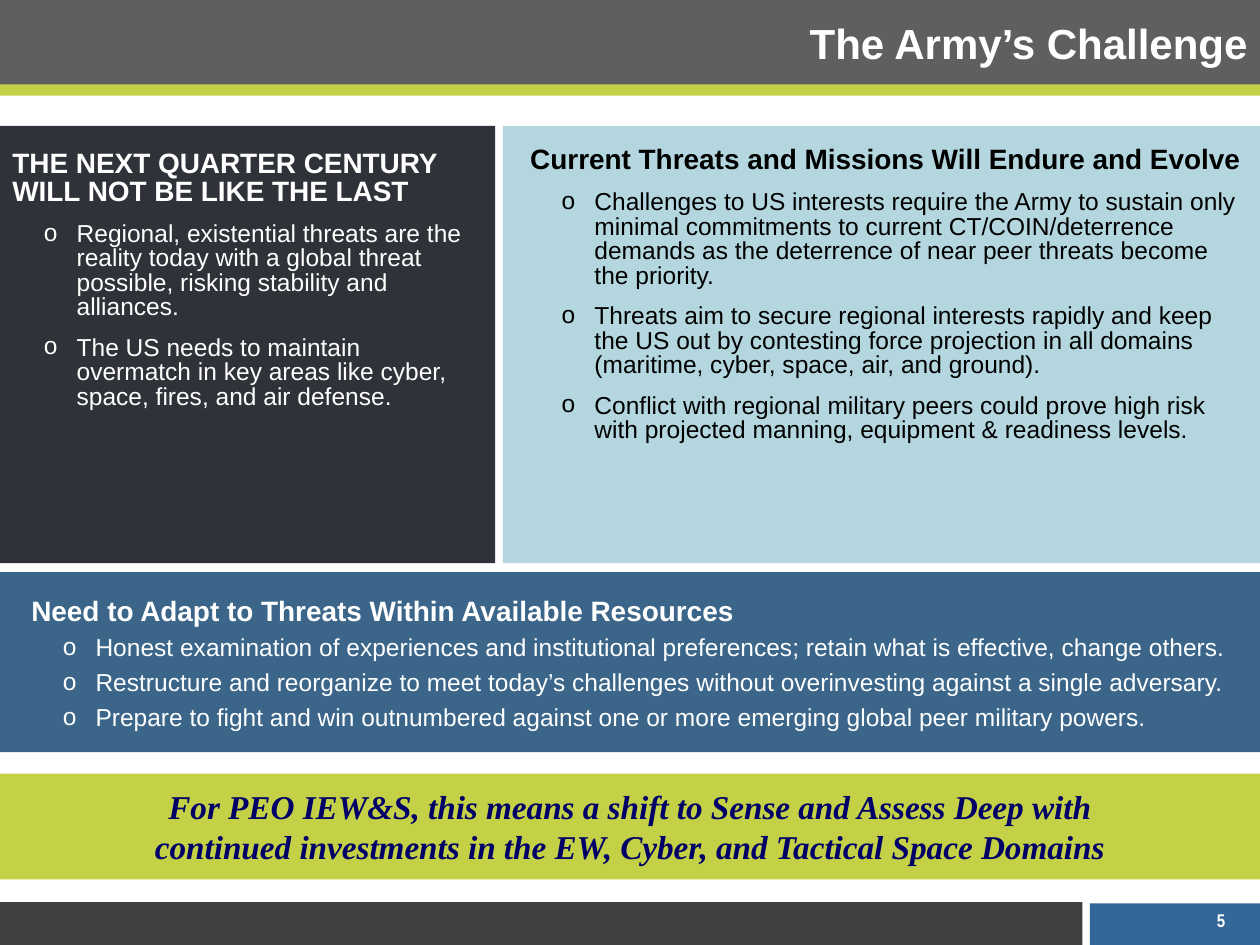
from lxml import etree
from pptx import Presentation
from pptx.dml.color import RGBColor
from pptx.enum import shapes, text
from pptx.oxml import ns
from pptx.util import Inches, Pt

WHITE = RGBColor(0xFF, 0xFF, 0xFF)
BLACK = RGBColor(0, 0, 0)
NAVY = RGBColor(0x00, 0x00, 0x66)
LIME = RGBColor(0xC4, 0xD1, 0x46)
DARK_GREY = RGBColor(0x40, 0x40, 0x40)
GREY = RGBColor(0x5F, 0x5F, 0x5F)
PAGE_BLUE = RGBColor(0x33, 0x66, 0x99)
STEEL = RGBColor(0x3B, 0x66, 0x89)
PALE_BLUE = RGBColor(0xB3, 0xD6, 0xDF)
CHARCOAL = RGBColor(0x2F, 0x32, 0x39)

# left, top, width, height in inches, then fill
BANDS = [
    ((0, 7.16, 8.59, 0.34), DARK_GREY),
    ((8.65, 7.17, 1.35, 0.34), PAGE_BLUE),
    ((0, 0, 10, 0.68), GREY),
    ((-0.01, 0.67, 10.01, 0.09), LIME),
    ((0, 4.54, 10, 1.43), STEEL),
    ((3.99, 1, 6.01, 3.47), PALE_BLUE),
    ((0, 1, 3.93, 3.47), CHARCOAL),
]

SECTIONS = [
    dict(
        place=(0, 1.15, 3.82, 2.18), color=WHITE, heading_line=16, gap=9,
        heading="THE NEXT QUARTER CENTURY WILL NOT BE LIKE THE LAST",
        points=[
            "Regional, existential threats are the reality today with a global "
            "threat possible, risking stability and alliances.",
            "The US needs to maintain overmatch in key areas like cyber, space, "
            "fires, and air defense.",
        ],
    ),
    dict(
        place=(4.11, 1.15, 5.89, 2.44), color=BLACK, heading_line=14, gap=9,
        heading="Current Threats and Missions Will Endure and Evolve",
        points=[
            "Challenges to US interests require the Army to sustain only minimal "
            "commitments to current CT/COIN/deterrence demands as the deterrence "
            "of near peer threats become the priority.",
            "Threats aim to secure regional interests rapidly and keep the US out "
            "by contesting force projection in all domains (maritime, cyber, "
            "space, air, and ground).",
            "Conflict with regional military peers could prove high risk with "
            "projected manning, equipment & readiness levels.",
        ],
    ),
    dict(
        place=(0.15, 4.73, 9.95, 1.14), color=WHITE, heading_line=14, gap=6,
        heading="Need to Adapt to Threats Within Available Resources",
        points=[
            "Honest examination of experiences and institutional preferences; "
            "retain what is effective, change others.",
            "Restructure and reorganize to meet today’s challenges without "
            "overinvesting against a single adversary.",
            "Prepare to fight and win outnumbered against one or more emerging "
            "global peer military powers.",
        ],
    ),
]

MESSAGE = [
    "For PEO IEW&S, this means a shift to Sense and Assess Deep with",
    "continued investments in the EW, Cyber, and Tactical Space Domains",
]


def add_band(page, place, fill):
    band = page.shapes.add_shape(
        shapes.MSO_SHAPE.RECTANGLE, *map(Inches, place))
    band.shadow.inherit = False
    band.fill.solid()
    band.fill.fore_color.rgb = fill
    band.line.fill.background()
    return band


def add_box(page, place, wrap=True):
    frame = page.shapes.add_textbox(*map(Inches, place)).text_frame
    frame.word_wrap = wrap
    return frame


def write(frame, words, size, color, font="Arial", bold=False, italic=False,
          align=text.PP_ALIGN.LEFT, line=None, after=None, bullet=False):
    """Fill the frame's empty first paragraph, or add one below the others."""
    para = frame.paragraphs[0]
    if para.runs:
        para = frame.add_paragraph()
    para.alignment = align
    if line is not None:
        para.line_spacing = line
    if after is not None:
        para.space_after = Pt(after)
    if bullet:
        para.level = 1
        settings = para._p.get_or_add_pPr()
        settings.set("marL", str(Inches(0.51)))
        settings.set("indent", str(Inches(-0.26)))
        etree.SubElement(settings, ns.qn("a:buFont"), typeface="Arial")
        etree.SubElement(settings, ns.qn("a:buChar"), char="o")
    span = para.add_run()
    span.text = words
    span.font.name = font
    span.font.size = Pt(size)
    span.font.bold = bold
    span.font.italic = italic
    span.font.color.rgb = color


def main():
    deck = Presentation()
    deck.slide_width, deck.slide_height = Inches(10), Inches(7.5)
    page = deck.slides.add_slide(deck.slide_layouts[6])

    for place, fill in BANDS:
        add_band(page, place, fill)

    title = add_box(page, (4.92, 0, 5.08, 0.74))
    title.vertical_anchor = text.MSO_ANCHOR.MIDDLE
    write(title, "The Army’s Challenge", 24, WHITE, bold=True,
          align=text.PP_ALIGN.RIGHT, line=0.85)

    number = add_box(page, (9.56, 7.17, 0.35, 0.28), wrap=False)
    write(number, "5", 10.5, WHITE, font="Arial Narrow", bold=True)

    for section in SECTIONS:
        frame = add_box(page, section["place"])
        color, gap = section["color"], section["gap"]
        write(frame, section["heading"], 16, color, bold=True,
              line=Pt(section["heading_line"]), after=gap)
        for point in section["points"]:
            write(frame, point, 14, color, line=Pt(14), after=gap, bullet=True)

    banner = add_band(page, (-0.01, 6.14, 10.02, 0.84), LIME).text_frame
    banner.word_wrap = True
    banner.vertical_anchor = text.MSO_ANCHOR.MIDDLE
    for words in MESSAGE:
        write(banner, words, 19, NAVY, font="Times New Roman", bold=True,
              italic=True, align=text.PP_ALIGN.CENTER)

    deck.save("out.pptx")


if __name__ == "__main__":
    main()
